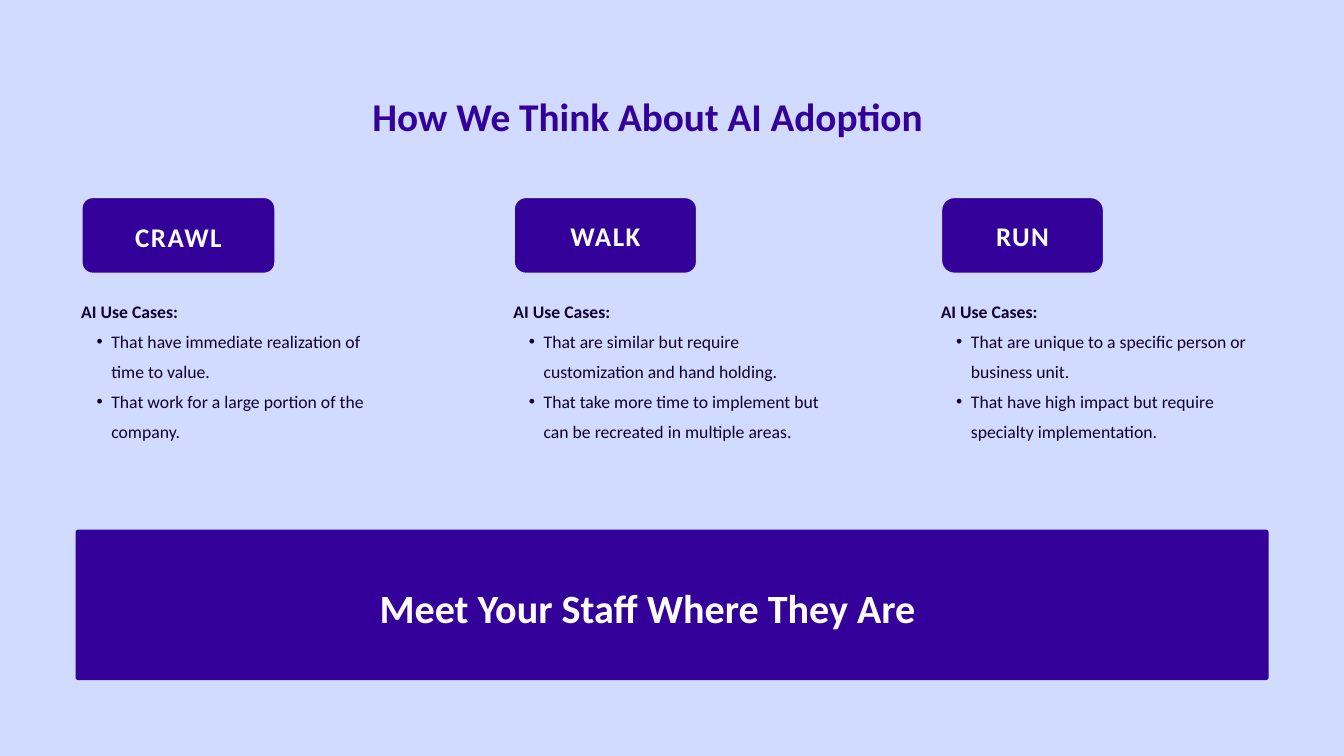
import pptx
import pptx.dml.color
import pptx.enum.shapes
import pptx.enum.text
import pptx.oxml.ns
import pptx.util
from lxml import etree

Cm = pptx.util.Cm
Pt = pptx.util.Pt
RGBColor = pptx.dml.color.RGBColor
ALIGN = pptx.enum.text.PP_ALIGN

LAVENDER = RGBColor(0xD1, 0xDA, 0xFF)
PURPLE = RGBColor(0x33, 0x00, 0x99)
INK = RGBColor(0x11, 0x00, 0x33)
WHITE = RGBColor(0xFD, 0xFD, 0xFD)

deck = pptx.Presentation()
deck.slide_width, deck.slide_height = Cm(50.8), Cm(28.58)
slide = deck.slides.add_slide(deck.slide_layouts[6])
slide.background.fill.solid()
slide.background.fill.fore_color.rgb = LAVENDER


def add_text(text, left, top, width, height, size, leading, color,
             align=ALIGN.CENTER, spacing=0):
    """Add a text box: the first line is bold, any further lines are bullets."""
    box = slide.shapes.add_textbox(Cm(left), Cm(top), Cm(width), Cm(height))
    frame = box.text_frame
    frame.word_wrap = True
    frame.auto_size = pptx.enum.text.MSO_AUTO_SIZE.SHAPE_TO_FIT_TEXT
    frame.margin_left = frame.margin_right = 0
    frame.margin_top = frame.margin_bottom = 0
    frame.text = text
    for i, line in enumerate(frame.paragraphs):
        line.alignment = align
        line.line_spacing = Pt(leading)
        font = line.runs[0].font
        font.name, font.size, font.bold = "Calibri", Pt(size), i == 0
        font.color.rgb = color
        if spacing:
            line.runs[0]._r.get_or_add_rPr().set("spc", str(spacing))
        if i > 0:
            line.level = 1
            properties = line._p.get_or_add_pPr()
            properties.set("marL", str(Cm(1.14)))
            properties.set("indent", str(-Cm(0.56)))
            for tag, key, value in (("a:buFont", "typeface", "Arial"),
                                    ("a:buChar", "char", "•")):
                bullet = etree.SubElement(properties, pptx.oxml.ns.qn(tag))
                bullet.set(key, value)


def add_panel(left, top, width, height, radius):
    """Add a purple rounded panel without an outline."""
    panel = slide.shapes.add_shape(
        pptx.enum.shapes.MSO_SHAPE.ROUNDED_RECTANGLE,
        Cm(left), Cm(top), Cm(width), Cm(height))
    panel.adjustments[0] = radius / height
    panel.shadow.inherit = False
    panel.fill.solid()
    panel.fill.fore_color.rgb = PURPLE
    panel.line.fill.background()
    return panel


# Title
add_text("How We Think About AI Adoption", 8.64, 3.18, 31.7, 2,
         size=42.1, leading=58.9, color=PURPLE)

# Stages: name, left, badge width, corner radius, label top, text width, use cases
stages = [
    ("CRAWL", 3.07, 7.35, 0.43, 8.13, 11.63,
     ["That have immediate realization of time to value.",
      "That work for a large portion of the company."]),
    ("WALK", 19.41, 6.95, 0.46, 8.1, 12.22,
     ["That are similar but require customization and hand holding.",
      "That take more time to implement but can be recreated in multiple areas."]),
    ("RUN", 35.56, 6.18, 0.51, 8.1, 12.37,
     ["That are unique to a specific person or business unit.",
      "That have high impact but require specialty implementation."]),
]
label_width = 5
for name, left, badge_width, radius, label_top, text_width, use_cases in stages:
    badge = add_panel(left, 7.44, badge_width, 2.92, radius)
    badge.line.color.rgb = LAVENDER
    badge.line.width = Pt(3)
    add_text(name, left + (badge_width - label_width) / 2, label_top,
             label_width, 1.4, size=28.9, leading=40.4, color=WHITE, spacing=160)
    add_text("\n".join(["AI Use Cases:"] + use_cases), left, 11.05,
             text_width, 5.5, size=18.9, leading=32, color=INK, align=ALIGN.LEFT)

# Closing banner
add_panel(2.86, 20.02, 45.09, 5.69, 0.1)
add_text("Meet Your Staff Where They Are", 11.89, 21.74, 25.17, 2.03,
         size=43, leading=60.2, color=WHITE)

deck.save("out.pptx")
